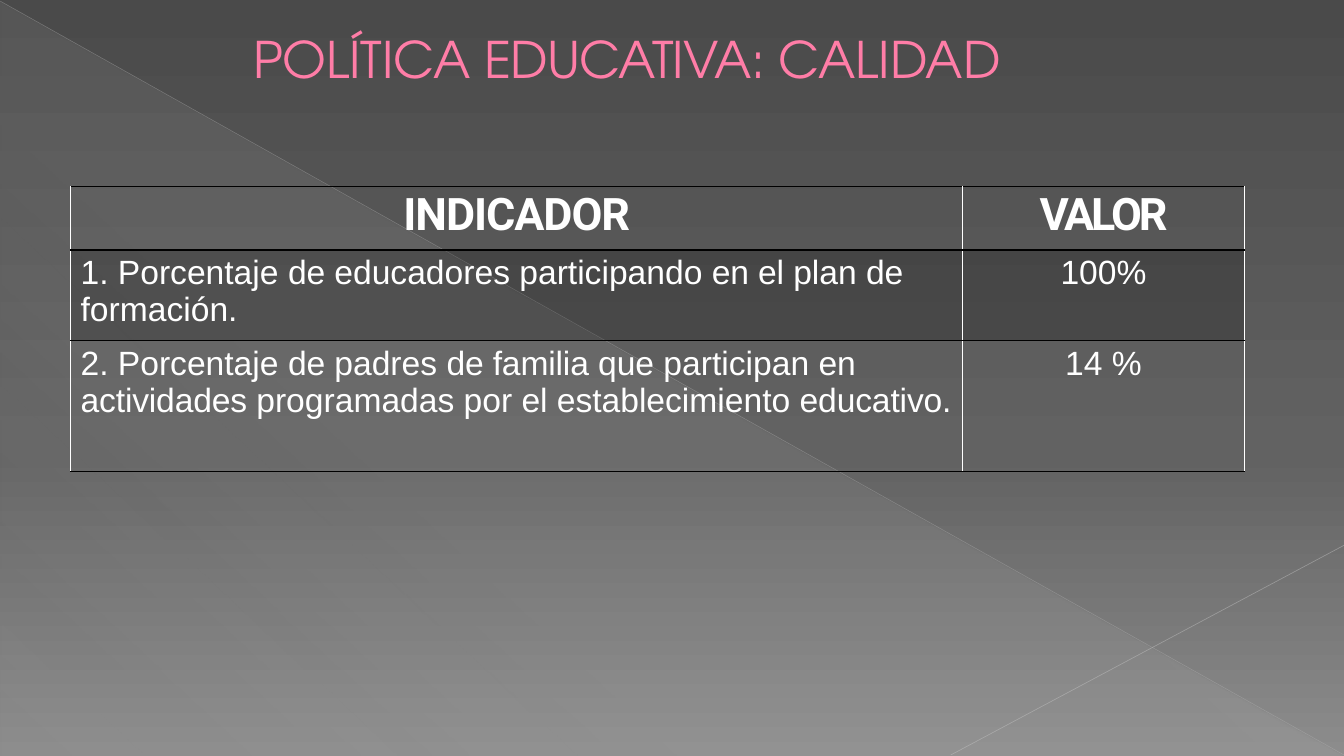
from lxml.etree import SubElement
from pptx import Presentation
from pptx.dml.color import RGBColor
from pptx.enum.shapes import MSO_CONNECTOR, MSO_SHAPE
from pptx.enum.text import MSO_ANCHOR, PP_ALIGN
from pptx.oxml.ns import qn
from pptx.util import Inches, Pt

PINK = RGBColor(0xFF, 0x7D, 0xA7)
PLUM = RGBColor(0xB1, 0x27, 0x61)
WHITE = RGBColor(0xFF, 0xFF, 0xFF)
BLACK = RGBColor(0x00, 0x00, 0x00)
DARK = RGBColor(0x4A, 0x4A, 0x4A)
MID = RGBColor(0x62, 0x62, 0x62)
LIGHT = RGBColor(0x8C, 0x8C, 0x8C)
SILVER = RGBColor(0xD2, 0xD2, 0xD2)
LINE_GREY = RGBColor(0xBF, 0xBF, 0xBF)
CORNER_GREY = RGBColor(0xC6, 0xC6, 0xC6)

W, H = 13.33, 7.5
BACKDROP = [(0, DARK, 100), (60, MID, 100), (100, LIGHT, 100)]
SHEEN = [(0, SILVER, 10), (70, SILVER, 8), (100, SILVER, 1)]
DIAGONALS = [
    ((0, 0.01), (W, 7.49), LINE_GREY, 0.39, 35),
    ((W, 5.41), (9.43, 7.49), CORNER_GREY, 0.47, 45),
]
TITLE = [("POLÍTICA ", -0.1), ("EDUCATIVA: ", -0.6), ("CALIDAD", 0)]
COLS = [8.85, 2.79]
ROWS = [0.63, 0.9, 1.3]
CELLS = [
    [[("INDICADOR", -0.8)], [("VALOR", -2.2)]],
    [[("1. Porcentaje ", 0), ("de ", -0.1), ("educadores participando ", 0),
      ("en el ", -0.1), ("plan ", 0), ("de  ", -0.1), ("formación.", 0)],
     [("100%", 0)]],
    [[("2. Porcentaje ", 0), ("de ", -0.1), ("padres ", 0), ("de familia ", -0.1),
      ("que participan ", 0), ("en  actividades ", -0.1), ("programadas por ", 0),
      ("el ", -0.1), ("establecimiento ", 0), ("educativo.", -0.1)],
     [("14 %", 0)]],
]


def add_color(parent, color, alpha=100):
    clr = SubElement(parent, qn("a:srgbClr"), val=str(color))
    if alpha < 100:
        SubElement(clr, qn("a:alpha"), val=str(alpha * 1000))


def set_gradient(props, stops, angle):
    solid = props.find(qn("a:solidFill"))
    grad = SubElement(props, qn("a:gradFill"), rotWithShape="1")
    props.replace(solid, grad)
    gs_lst = SubElement(grad, qn("a:gsLst"))
    for pos, color, alpha in stops:
        add_color(SubElement(gs_lst, qn("a:gs"), pos=str(pos * 1000)), color, alpha)
    SubElement(grad, qn("a:lin"), ang=str(angle * 60000), scaled="0")


def add_runs(p, runs, font, size, color, bold=False):
    for text, spacing in runs:
        r = p.add_run()
        r.text = text
        r.font.name, r.font.size, r.font.bold = font, Pt(size), bold
        r.font.color.rgb = color
        r.font._element.set("spc", str(round(spacing * 100)))


def add_border(tc_pr, side):
    ln = SubElement(tc_pr, qn(f"a:{side}"), w=str(Pt(1)))
    add_color(SubElement(ln, qn("a:solidFill")), BLACK)


def add_backdrop(s):
    s.background.fill.solid()
    set_gradient(s.background._cSld.bg.bgPr, BACKDROP, 90)
    sp = s.shapes.add_shape(MSO_SHAPE.RIGHT_TRIANGLE, Inches(0.01), Inches(0.02),
                            Inches(13.31), Inches(7.48))
    sp.shadow.inherit = False
    sp.line.fill.background()
    sp.fill.solid()
    set_gradient(sp._element.spPr, SHEEN, 133)
    for start, end, color, width, alpha in DIAGONALS:
        cn = s.shapes.add_connector(MSO_CONNECTOR.STRAIGHT, *map(Inches, start + end))
        cn.line.width = Pt(width)
        cn.line.color.rgb = color
        clr = cn.line._ln.find(".//" + qn("a:srgbClr"))
        SubElement(clr, qn("a:alpha"), val=str(alpha * 1000))
        SubElement(cn._element.spPr, qn("a:effectLst"))


def add_title(s):
    sp = s.shapes.add_textbox(*map(Inches, (2.5, 0.26, 7.88, 0.63)))
    tf = sp.text_frame
    tf.word_wrap = True
    tf.vertical_anchor = MSO_ANCHOR.MIDDLE
    tf.margin_left = tf.margin_right = tf.margin_bottom = 0
    tf.margin_top = Inches(0.01)
    p = tf.paragraphs[0]
    p.space_before = Pt(1)
    p._p.get_or_add_pPr().set("marL", str(Inches(0.01)))
    add_runs(p, TITLE, "TeX Gyre Adventor", 36, PINK)
    for r in p.runs:
        r_pr = r.font._element
        ln = SubElement(r_pr, qn("a:ln"), w=str(Pt(0.5)))
        add_color(SubElement(ln, qn("a:solidFill")), PLUM)
        r_pr.insert(0, ln)


def add_indicators(s):
    frame = s.shapes.add_table(len(ROWS), len(COLS), Inches(0.7), Inches(1.85),
                               Inches(sum(COLS)), Inches(sum(ROWS)))
    table = frame.table
    table.first_row = table.horz_banding = False
    for col, width in zip(table.columns, COLS):
        col.width = Inches(width)
    for i, (row, height) in enumerate(zip(table.rows, ROWS)):
        row.height = Inches(height)
        for j, cell in enumerate(row.cells):
            header = i == 0
            cell.margin_left = cell.margin_right = cell.margin_bottom = 0
            cell.margin_top = Inches(0.02 if header else 0.04)
            p = cell.text_frame.paragraphs[0]
            p.space_before = Pt(1.6 if header else 3)
            if header or j:
                p.alignment = PP_ALIGN.CENTER
            else:
                p._p.get_or_add_pPr().set("marL", str(Inches(0.1)))
            font, size = ("Roboto", 32) if header else ("Arial", 24)
            add_runs(p, CELLS[i][j], font, size, WHITE, header)
            tc_pr = cell._tc.get_or_add_tcPr()
            for side in ("lnT", "lnB"):
                add_border(tc_pr, side)
            if i == 1:
                add_color(SubElement(tc_pr, qn("a:solidFill")), BLACK, 20)
            else:
                cell.fill.background()


def main():
    """Build the education quality indicators slide."""
    prs = Presentation()
    prs.slide_width, prs.slide_height = Inches(W), Inches(H)
    s = prs.slides.add_slide(prs.slide_layouts[6])
    add_backdrop(s)
    add_title(s)
    add_indicators(s)
    prs.save("out.pptx")


if __name__ == "__main__":
    main()
